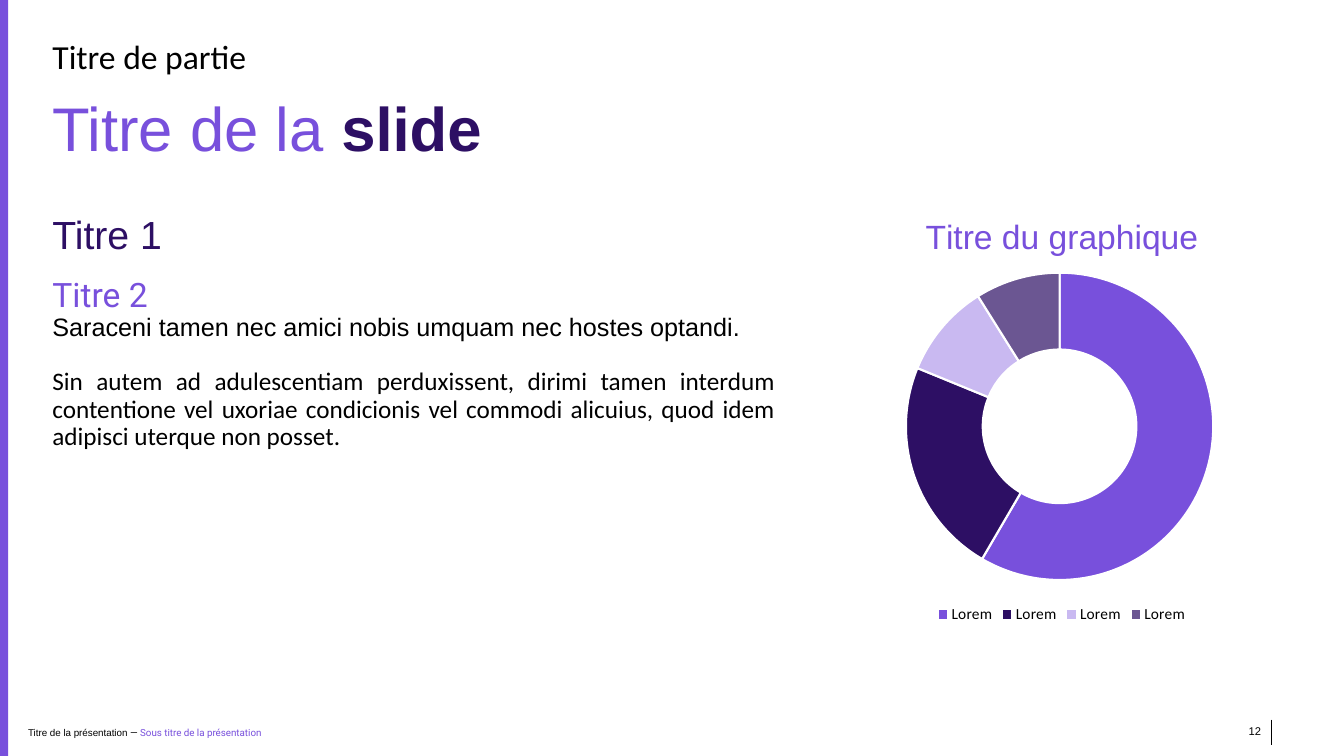
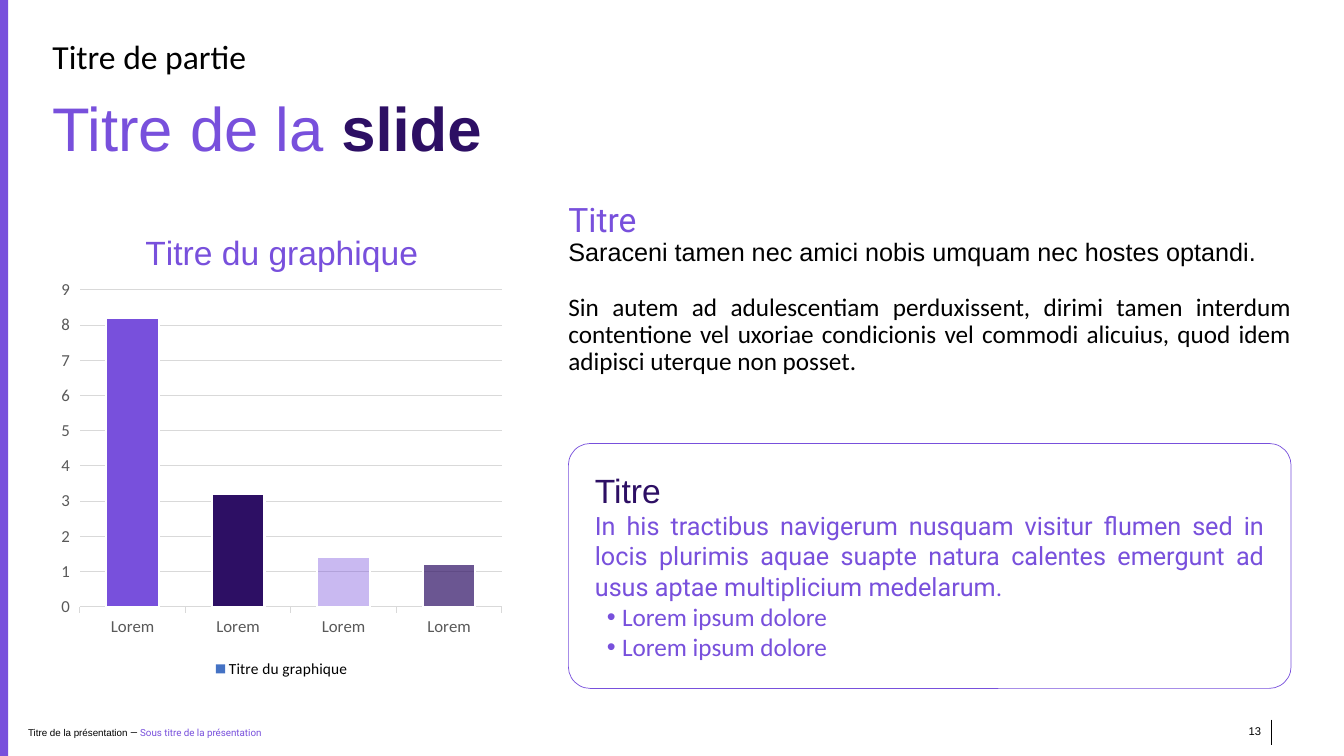
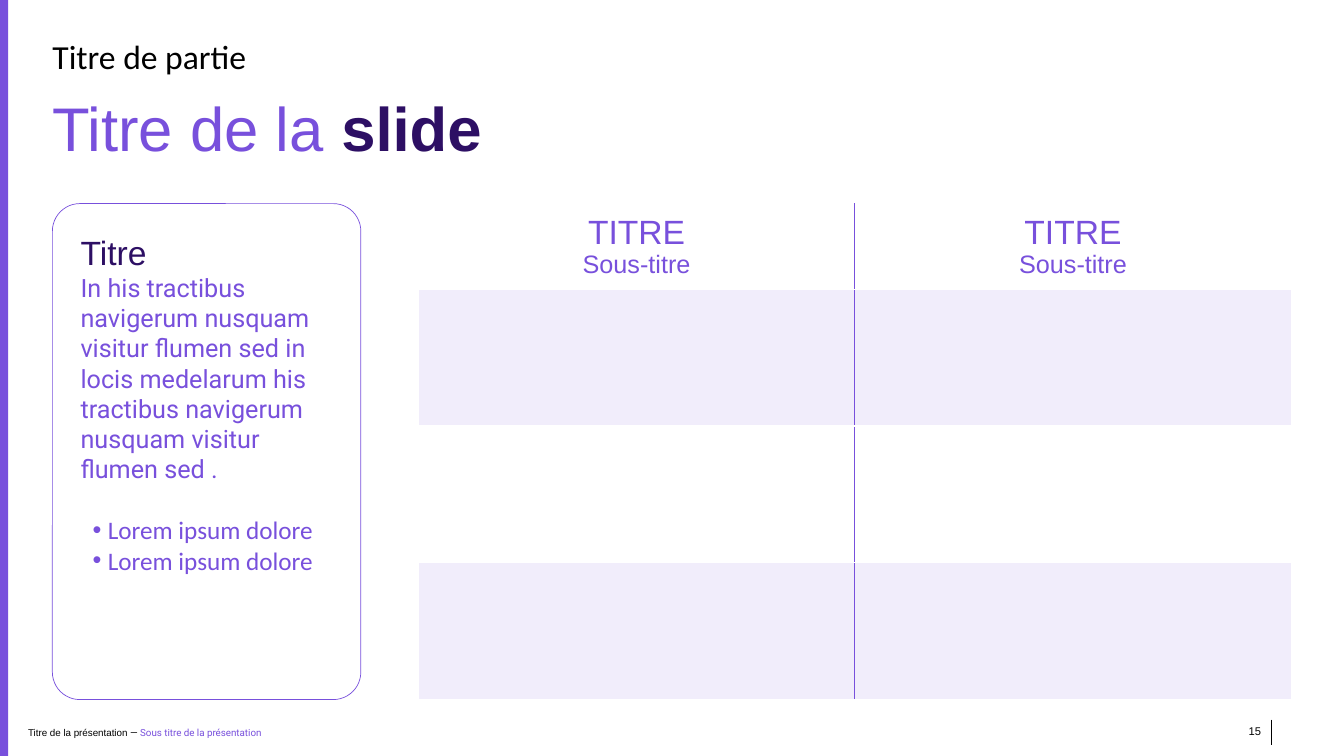
from pptx import Presentation
from pptx.chart.data import CategoryChartData
from pptx.dml.color import RGBColor
from pptx.enum import chart as ch, shapes, text
from pptx.oxml import parse_xml
from pptx.oxml.ns import nsdecls, qn
from pptx.util import Pt

C = {"violet": "7850DC", "dark": "2D0F64", "black": "000000", "white": "FFFFFF",
     "grey": "595959", "rule": "D9D9D9", "series": "4472C4"}
RGB = {name: RGBColor.from_string(value) for name, value in C.items()}
LEFT, JUSTIFY = text.PP_ALIGN.LEFT, text.PP_ALIGN.JUSTIFY
CENTER, RIGHT = text.PP_ALIGN.CENTER, text.PP_ALIGN.RIGHT
TOP, MIDDLE = text.MSO_ANCHOR.TOP, text.MSO_ANCHOR.MIDDLE
MARGIN, COLUMN, WIDE, BODY = 37.44, 406, 516.24, 145.44


def write(tf, rows, align=LEFT, spacing=1.0):
    for i, (before, bullet, *runs) in enumerate(rows):
        p = tf.paragraphs[0] if i == 0 else tf.add_paragraph()
        p.alignment, p.line_spacing, p.space_before = align, spacing, Pt(before)
        if bullet:
            pPr = p._p.get_or_add_pPr()
            pPr.set("marL", str(Pt(19.44)))
            pPr.set("indent", str(Pt(-10.8)))
            pPr.append(parse_xml(f'<a:buClr {nsdecls("a")}><a:srgbClr val="{C["violet"]}"/></a:buClr>'))
            pPr.append(parse_xml(f'<a:buFont {nsdecls("a")} typeface="Arial"/>'))
            pPr.append(parse_xml(f'<a:buChar {nsdecls("a")} char="•"/>'))
        for words, size, font, colour, *bold in runs:
            r = p.add_run()
            r.text = words
            r.font.size, r.font.name, r.font.color.rgb = Pt(size), font, RGB[colour]
            r.font.bold = bool(bold)


def box(s, at, rows, align=LEFT, spacing=1.0, anchor=TOP, insets=(0, 0, 0, 0), card=0):
    at = [Pt(v) for v in at]
    if card:
        sp = s.shapes.add_shape(shapes.MSO_SHAPE.ROUNDED_RECTANGLE, *at)
        sp.adjustments[0] = card
        sp.shadow.inherit = False
        sp.fill.background()
        sp.line.color.rgb, sp.line.width = RGB["violet"], Pt(0.5)
    else:
        sp = s.shapes.add_textbox(*at)
    tf = sp.text_frame
    tf.word_wrap, tf.vertical_anchor = True, anchor
    tf.margin_left, tf.margin_top, tf.margin_right, tf.margin_bottom = [Pt(v) for v in insets]
    write(tf, rows, align, spacing)


prs = Presentation()
prs.slide_width, prs.slide_height = Pt(960), Pt(540)
slides = []
for number in (12, 13, 15):
    s = prs.slides.add_slide(prs.slide_layouts[6])
    slides.append(s)
    band = s.shapes.add_shape(shapes.MSO_SHAPE.RECTANGLE, 0, 0, Pt(5.76), Pt(540))
    band.shadow.inherit = False
    band.fill.solid()
    band.fill.fore_color.rgb = RGB["violet"]
    band.line.fill.background()
    tick = s.shapes.add_connector(shapes.MSO_CONNECTOR.STRAIGHT, Pt(908), Pt(514), Pt(908), Pt(532))
    tick.line.color.rgb, tick.line.width = RGB["black"], Pt(0.5)
    tick.element.spPr.append(parse_xml(f'<a:effectLst {nsdecls("a")}/>'))
    box(s, (868.3, 514.8, 39.6, 14.4), [(0, False, (str(number), 8, "Arial", "black"))],
        RIGHT, anchor=MIDDLE, insets=(7.2, 3.6, 7.2, 3.6))
    box(s, (5.76, 511.2, 324, 23.76), [(
        0, False, ("Titre de la présentation ", 7, "Arial", "black"), ("— ", 7, "Roboto", "black"),
        ("Sous titre de la présentation", 7, "Roboto", "violet"))],
        anchor=MIDDLE, insets=(14.4, 0, 0, 0))
    box(s, (MARGIN, 70.56, 770.4, 48.24), [(
        0, False, ("Titre de la ", 44, "Arial", "violet"), ("slide", 44, "Arial", "dark", True))],
        spacing=0.9)
    box(s, (MARGIN, 28.8, 442, 26), [(0, False, ("Titre de partie", 24, "Calibri", "black"))],
        spacing=0.9)
ring, columns, grid = slides

prose = [
    (0, False, ("Saraceni tamen nec amici nobis umquam nec hostes optandi.", 18, "Arial", "black")),
    (19.6, False, ("Sin autem ad adulescentiam perduxissent, dirimi tamen interdum contentione vel "
                   "uxoriae condicionis vel commodi alicuius, quod idem adipisci uterque non posset.",
                   18, "Calibri", "black"))]
box(ring, (MARGIN, 154, WIDE, 190), [
    (0, False, ("Titre 1", 28, "Arial", "dark")),
    (14.5, False, ("Titre 2", 24, "Roboto", "violet")), *prose], JUSTIFY, 0.9)
box(columns, (COLUMN, BODY, WIDE, 144), [
    (0, False, ("Titre", 24, "Roboto", "violet")), *prose], JUSTIFY, 0.9)

cards = [
    (columns, (COLUMN, 316.8, WIDE, 174.96), JUSTIFY, MIDDLE, 0,
     "In his tractibus navigerum nusquam visitur flumen sed in locis plurimis aquae suapte natura "
     "calentes emergunt ad usus aptae multiplicium medelarum."),
    (grid, (MARGIN, BODY, 220.3, 354.24), LEFT, TOP, 22,
     "In his tractibus navigerum nusquam visitur flumen sed in locis medelarum his tractibus "
     "navigerum nusquam visitur flumen sed .")]
for s, at, align, anchor, gap, words in cards:
    item = ("Lorem ipsum dolore", 18, "Calibri", "violet")
    box(s, at, [(0, False, ("Titre", 24, "Arial", "dark")),
                (0, False, (words, 18, "Roboto", "violet")),
                (gap, True, item), (0, True, item)],
        align, anchor=anchor, insets=(14.4,) * 4, card=0.089)

charts = [
    (ring, ch.XL_CHART_TYPE.DOUGHNUT, (594.72, 138.96, 327.6, 309.6), "Series 1",
     (59, 23, 10, 9), (0.16, 0.18, 0.67, 0.71)),
    (columns, ch.XL_CHART_TYPE.COLUMN_CLUSTERED, (MARGIN, 149.76, 327.6, 337.68),
     "Titre du graphique", (8.2, 3.2, 1.4, 1.2), (0.06, 0.17, 0.92, 0.67))]
for s, kind, at, name, values, area in charts:
    data = CategoryChartData()
    data.categories = ["Lorem"] * 4
    data.add_series(name, values)
    chart = s.shapes.add_chart(kind, *[Pt(v) for v in at], data).chart
    chart.font.size, chart.font.name, chart.font.color.rgb = Pt(10), "Calibri", RGB["black"]
    chart.has_title = True
    write(chart.chart_title.text_frame, [(0, False, ("Titre du graphique", 24, "Arial", "violet"))], CENTER)
    chart.chart_title.include_in_layout = False
    chart.has_legend = True
    legend = chart.legend
    legend.position, legend.include_in_layout = ch.XL_LEGEND_POSITION.BOTTOM, False
    legend.font.size, legend.font.name, legend.font.color.rgb = Pt(11), "Calibri", RGB["black"]
    plot = chart.plots[0]
    plot.has_data_labels = False
    series = plot.series[0]
    if kind == ch.XL_CHART_TYPE.COLUMN_CLUSTERED:
        plot.vary_by_categories, plot.gap_width = False, 100
        series.format.fill.solid()
        series.format.fill.fore_color.rgb = RGB["series"]
        for axis in (chart.category_axis, chart.value_axis):
            font = axis.tick_labels.font
            font.size, font.name, font.color.rgb = Pt(12), "Calibri", RGB["grey"]
            axis.major_tick_mark = ch.XL_TICK_MARK.OUTSIDE
        chart.value_axis.minimum_scale, chart.value_axis.maximum_scale = 0, 9
        chart.value_axis.major_unit = 1
        chart.value_axis.format.line.fill.background()
        for line in (chart.category_axis.format.line, chart.value_axis.major_gridlines.format.line):
            line.color.rgb, line.width = RGB["rule"], Pt(0.75)
    for i, colour in enumerate(("violet", "dark") * 2):
        fmt = series.points[i].format
        fmt.fill.solid()
        fmt.fill.fore_color.rgb = RGB[colour]
        fmt.line.color.rgb, fmt.line.width = RGB["white"], Pt(1.5)
    fills = chart.element.xpath(".//c:dPt/c:spPr/a:solidFill/a:srgbClr")
    for fill, opacity in zip(fills[2:], (40, 70)):
        fill.append(parse_xml(f'<a:alpha {nsdecls("a")} val="{opacity * 1000}"/>'))
    plot_area = chart.element.xpath(".//c:plotArea")[0]
    for old in plot_area.findall(qn("c:layout")):
        plot_area.remove(old)
    sizes = "".join(f'<c:{k} val="{v}"/>' for k, v in zip("xywh", area))
    plot_area.insert(0, parse_xml(
        f'<c:layout {nsdecls("c")}><c:manualLayout><c:layoutTarget val="inner"/>'
        f'<c:xMode val="edge"/><c:yMode val="edge"/>{sizes}</c:manualLayout></c:layout>'))

gf = grid.shapes.add_table(4, 2, Pt(298.8), Pt(BODY), Pt(623.52), Pt(354.24))
table = gf.table
table.first_row = table.horz_banding = False
for column in table.columns:
    column.width = Pt(311.76)
for i, row in enumerate(table.rows):
    row.height = Pt(61.2 if i == 0 else 97.68)
    for j, cell in enumerate(row.cells):
        if i % 2:
            cell.fill.solid()
            cell.fill.fore_color.rgb = RGB["violet"]
        else:
            cell.fill.background()
        if i == 0:
            cell.vertical_anchor = MIDDLE
            write(cell.text_frame, [(0, False, ("TITRE", 24, "Arial", "violet")),
                                    (0, False, ("Sous-titre", 18, "Arial", "violet"))], CENTER)
        side = "RL"[j]
        cell._tc.get_or_add_tcPr().insert(0, parse_xml(
            f'<a:ln{side} {nsdecls("a")} w="{Pt(0.5)}"><a:solidFill><a:srgbClr val="{C["violet"]}"/>'
            f'</a:solidFill></a:ln{side}>'))
for fill in gf.element.xpath(".//a:tcPr/a:solidFill/a:srgbClr"):
    fill.append(parse_xml(f'<a:alpha {nsdecls("a")} val="10000"/>'))

prs.save("out.pptx")
